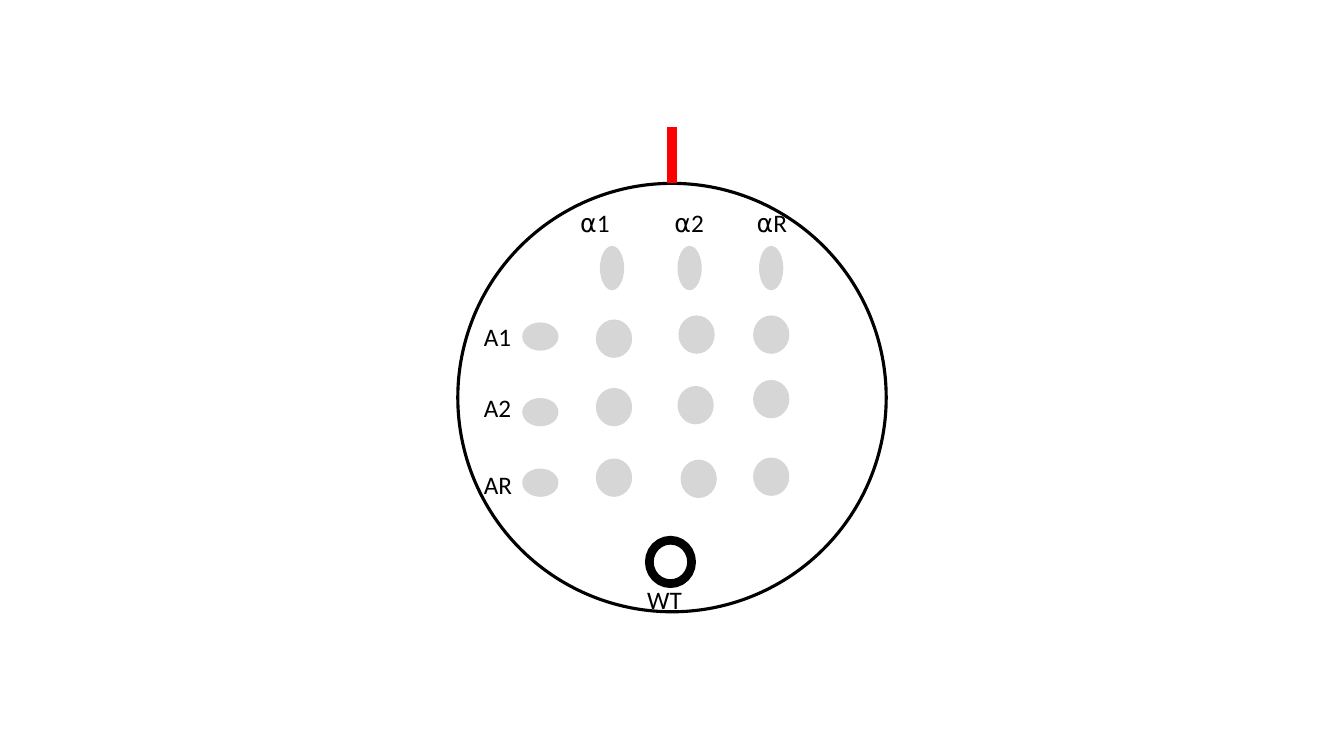
import dataclasses
import pptx
import pptx.dml.color
import pptx.enum.shapes
import pptx.enum.text
import pptx.oxml.ns
import pptx.util
from lxml import etree

Pt = pptx.util.Pt
Align = pptx.enum.text.PP_ALIGN


@dataclasses.dataclass(frozen=True)
class Theme:
    """Colours, type and line weights of the slide."""
    ink: str = "000000"
    mark: str = "FF0000"
    font: str = "Calibri"
    size: float = 18
    alpha: int = 16
    rim: float = 2.25
    ring: float = 6.25
    tick: float = 7.75


THEME = Theme()
HEADS = (("⍺1", 72.7, 50.4, 110.2), ("⍺2", 135.4, 59.8, 165.6),
         ("⍺R", 194.4, 59.8, 223.9))
ROWS = (("A1", 95, 36, 28.8, 109.4), ("A2", 145.4, 54, 35.3, 163.4),
        ("AR", 200.9, 54, 35.3, 213.8))
SPOTS = ((111.6, 110.9), (170.6, 108), (223.9, 108),
         (111.6, 159.8), (169.9, 158.4), (223.9, 154.1),
         (111.6, 210.2), (172.1, 211), (223.9, 209.5))


def color(code):
    """Turn a hex code into a colour."""
    return pptx.dml.color.RGBColor.from_string(code)


def oval(group, mid, size):
    """Add a plain ellipse around its middle."""
    (x, y), (w, h) = mid, size
    shape = group.shapes.add_shape(
        pptx.enum.shapes.MSO_SHAPE.OVAL,
        Pt(x - w / 2), Pt(y - h / 2), Pt(w), Pt(h))
    shape.shadow.inherit = False
    return shape


def ring(group, mid, size, width):
    """Add a hollow ellipse with a dark line."""
    shape = oval(group, mid, size)
    shape.fill.background()
    shape.line.color.rgb = color(THEME.ink)
    shape.line.width = Pt(width)


def spot(group, mid, size):
    """Add a see-through ellipse with no line."""
    shape = oval(group, mid, size)
    shape.fill.solid()
    shape.fill.fore_color.rgb = color(THEME.ink)
    shape.line.fill.background()
    tint = shape.fill._xPr.find(".//" + pptx.oxml.ns.qn("a:srgbClr"))
    alpha = etree.SubElement(tint, pptx.oxml.ns.qn("a:alpha"))
    alpha.set("val", str(THEME.alpha * 1000))


def label(group, text, box, align=Align.LEFT):
    """Add a one-line label in its box."""
    frame = group.shapes.add_textbox(*map(Pt, box)).text_frame
    frame.word_wrap = True
    line = frame.paragraphs[0]
    line.alignment = align
    run = line.add_run()
    run.text = text
    run.font.name = THEME.font
    run.font.size = Pt(THEME.size)
    run.font.color.rgb = color(THEME.ink)


def tick(group, x, top, end):
    """Add the upright mark above the plate."""
    line = group.shapes.add_connector(
        pptx.enum.shapes.MSO_CONNECTOR.STRAIGHT, Pt(x), Pt(top), Pt(x), Pt(end))
    line.line.color.rgb = color(THEME.mark)
    line.line.width = Pt(THEME.tick)
    etree.SubElement(line._element.spPr, pptx.oxml.ns.qn("a:effectLst"))


def plate(slide, left, top, size):
    """Draw the round plate with its spots, labels and mark."""
    group = slide.shapes.add_group_shape()
    half = size / 2
    ring(group, (left + half, top + half), (size, size), THEME.rim)
    for text, x, w, mid in HEADS:
        label(group, text, (left + x, top + 13.7, w, 35.3), Align.CENTER)
        spot(group, (left + mid, top + 60.5), (17.3, 31.7))
    for text, y, w, h, mid in ROWS:
        label(group, text, (left + 11.5, top + y, w, h))
        spot(group, (left + 59, top + mid), (25.9, 20.2))
    for x, y in SPOTS:
        spot(group, (left + x, top + y), (25.9, 27.4))
    ring(group, (left + 151.9, top + 270.4), (30.2, 31), THEME.ring)
    label(group, "WT", (left + 128.2, top + 283, 54, 35.3))
    tick(group, left + half, top - 40.3, top)


def main():
    """Build and save the slide."""
    deck = pptx.Presentation()
    deck.slide_width, deck.slide_height = Pt(960), Pt(540)
    slide = deck.slides.add_slide(deck.slide_layouts[6])
    plate(slide, 327, 131, 306)
    deck.save("out.pptx")


if __name__ == "__main__":
    main()
